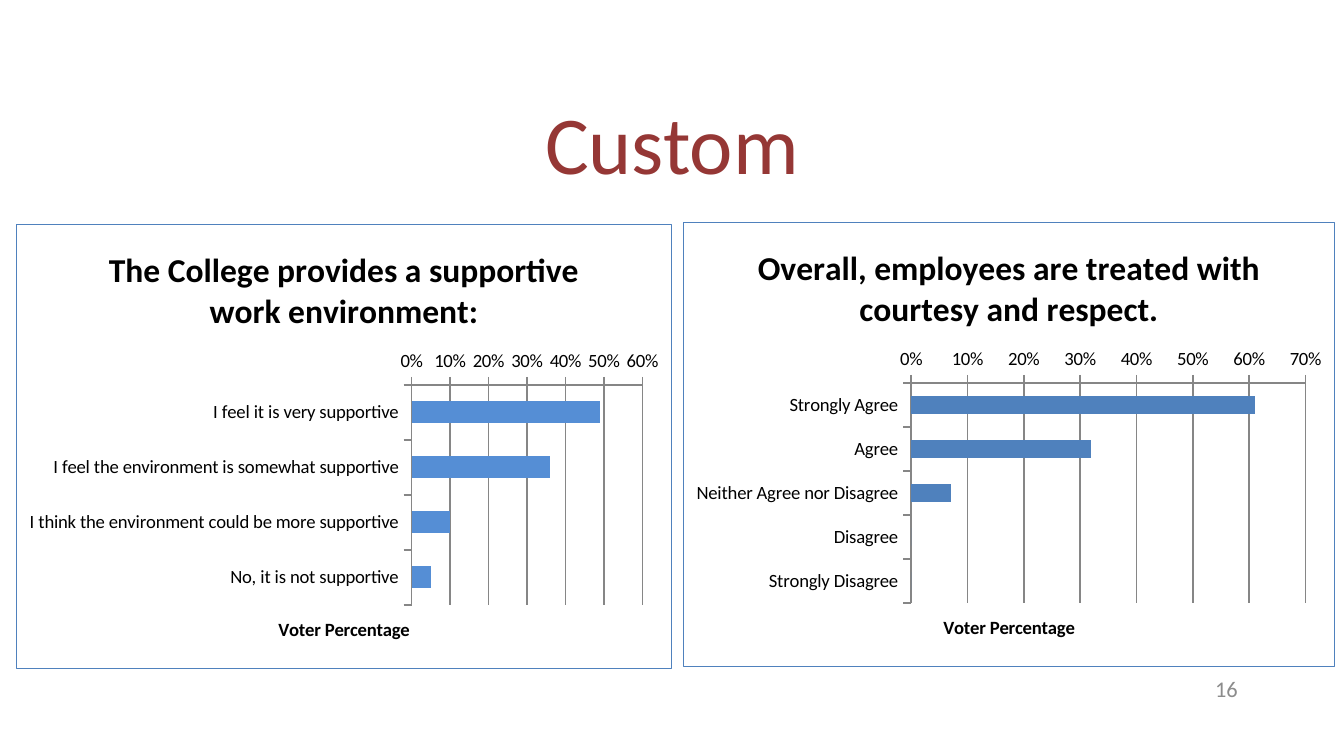
"""Builds a slide with two survey bar charts."""
import pptx
import pptx.chart.data
import pptx.dml.color
import pptx.enum.chart
import pptx.enum.text
import pptx.oxml
import pptx.util

COLORS = {"title": "953735", "text": "000000", "muted": "8C8C8C", "grid": "868686",
          "edge": "4F81BD", "light": "558ED5"}
FONT = "Calibri"
ALIGN = pptx.enum.text.PP_ALIGN
MIDDLE = pptx.enum.text.MSO_ANCHOR.MIDDLE
TYPES = pptx.enum.chart
BORDER = """<c:spPr xmlns:c="http://schemas.openxmlformats.org/drawingml/2006/chart"
 xmlns:a="http://schemas.openxmlformats.org/drawingml/2006/main"><a:noFill/>
 <a:ln w="9525"><a:solidFill><a:srgbClr val="%s"/></a:solidFill></a:ln></c:spPr>"""


def emu(px):
    return pptx.util.Emu(round(px * 914400 / 134.4))


def rgb(name):
    return pptx.dml.color.RGBColor.from_string(COLORS[name])


class Deck:
    def __init__(self):
        self.file = pptx.Presentation()
        self.file.slide_width, self.file.slide_height = emu(1344), emu(756)
        self.slide = self.file.slides.add_slide(self.file.slide_layouts[5])

    def style(self, font, size, color, bold=False):
        font.name, font.size, font.bold = FONT, pptx.util.Pt(size), bold
        font.color.rgb = rgb(color)

    def put(self, frame, text, size, color, align=ALIGN.CENTER, bold=False):
        frame.text = text
        para = frame.paragraphs[0]
        para.alignment = align
        self.style(para.runs[0].font, size, color, bold)
        return para

    def title(self, text, box):
        shape = self.slide.shapes.title
        shape.left, shape.top, shape.width, shape.height = map(emu, box)
        shape.text_frame.vertical_anchor = MIDDLE
        self.put(shape.text_frame, text, 44, "title").line_spacing = 0.9

    def label(self, text, box, size, color, align):
        frame = self.slide.shapes.add_textbox(*map(emu, box)).text_frame
        frame.word_wrap = True
        frame.vertical_anchor = MIDDLE
        self.put(frame, text, size, color, align)

    def chart(self, text, box, rows, top, color):
        data = pptx.chart.data.CategoryChartData(number_format="0%")
        data.categories = list(rows)
        data.add_series("Series 1", list(rows.values()))
        kind = TYPES.XL_CHART_TYPE.BAR_CLUSTERED
        chart = self.slide.shapes.add_chart(kind, *map(emu, box), data).chart
        self.style(chart.font, 10, "text")
        chart.has_legend = False
        chart.has_title = True
        self.put(chart.chart_title.text_frame, text, 18, "text", bold=True)
        border = pptx.oxml.parse_xml(BORDER % COLORS["edge"])
        chart.element.chart.addnext(border)

        plot = chart.plots[0]
        plot.gap_width, plot.vary_by_categories = 150, False
        fill = plot.series[0].format.fill
        fill.solid()
        fill.fore_color.rgb = rgb(color)

        cats, vals = chart.category_axis, chart.value_axis
        cats.reverse_order = True
        vals.minimum_scale, vals.maximum_scale, vals.major_unit = 0, top, 0.1
        vals.has_major_gridlines = True
        vals.tick_labels.number_format = "0%"
        vals.tick_labels.number_format_is_linked = False
        vals.has_title = True
        self.put(vals.axis_title.text_frame, "Voter Percentage", 10, "text", bold=True)
        for axis in (cats, vals):
            axis.major_tick_mark = TYPES.XL_TICK_MARK.OUTSIDE
            axis.minor_tick_mark = TYPES.XL_TICK_MARK.NONE
        for part in (cats, vals, vals.major_gridlines):
            part.format.line.color.rgb = rgb("grid")
            part.format.line.width = pptx.util.Pt(0.75)


def main():
    deck = Deck()
    deck.title("Custom", (93, 75, 1158, 146))
    deck.chart("Overall, employees are treated with courtesy and respect.",
               (683, 222, 652, 445),
               {"Strongly Agree": 0.61, "Agree": 0.32, "Neither Agree nor Disagree": 0.07,
                "Disagree": 0, "Strongly Disagree": 0}, 0.7, "edge")
    deck.chart("The College provides a supportive work environment:",
               (16, 224, 656, 445),
               {"I feel it is very supportive": 0.49,
                "I feel the environment is somewhat supportive": 0.36,
                "I think the environment could be more supportive": 0.1,
                "No, it is not supportive": 0.05}, 0.6, "light")
    deck.label("16", (949, 669, 302, 40), 12, "muted", ALIGN.RIGHT)
    deck.file.save("out.pptx")


if __name__ == "__main__":
    main()
